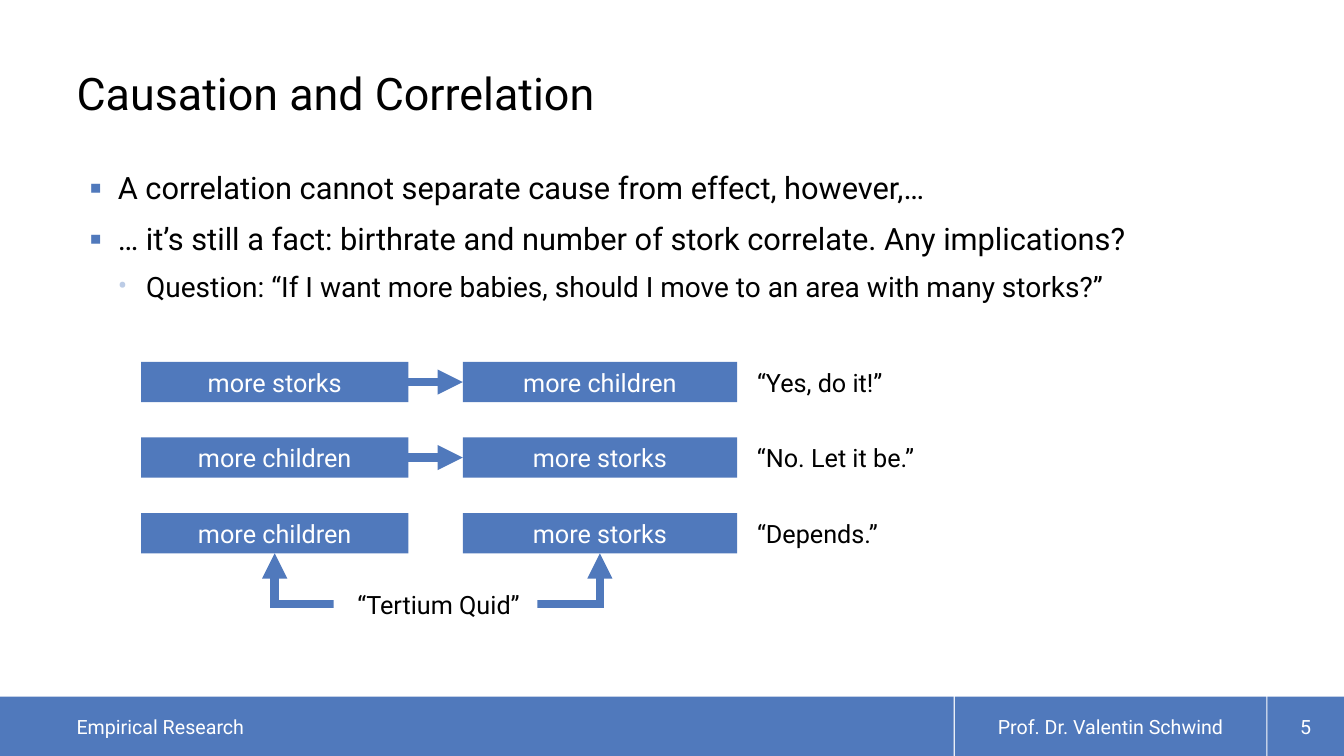
from dataclasses import dataclass

from lxml.etree import SubElement
from pptx import Presentation
from pptx.dml.color import RGBColor
from pptx.enum.shapes import MSO_CONNECTOR, MSO_SHAPE
from pptx.enum.text import MSO_ANCHOR, PP_ALIGN
from pptx.oxml.ns import qn
from pptx.slide import Slide
from pptx.text.text import TextFrame, _Paragraph
from pptx.util import Inches, Pt


@dataclass(frozen=True)
class Theme:
    """Colours and type sizes of the slide."""
    font: str = "Roboto"
    blue: RGBColor = RGBColor(0x50, 0x79, 0xBC)
    pale_blue: RGBColor = RGBColor(0xBC, 0xCC, 0xE6)
    white: RGBColor = RGBColor(0xFF, 0xFF, 0xFF)
    black: RGBColor = RGBColor(0, 0, 0)
    title: int = 32
    point: int = 22
    subpoint: int = 20
    diagram: int = 18
    footer: int = 14
    arrow: int = 6


@dataclass(frozen=True)
class Panel:
    """A filled rectangle with one line of text."""
    text: str
    left: float
    top: float
    width: float
    height: float
    fill: RGBColor
    ink: RGBColor
    size: int
    align: PP_ALIGN = PP_ALIGN.CENTER
    left_inset: float = 0.1
    right_inset: float = 0.1


@dataclass(frozen=True)
class Bullet:
    """A bulleted statement."""
    text: str
    level: int
    mark: str
    mark_color: RGBColor
    size: int


@dataclass(frozen=True)
class Hypothesis:
    """A pair of linked observations and the answer they imply."""
    first: str
    second: str
    answer: str
    answer_width: float
    causal: bool


THEME = Theme()
ROW_TOP, ROW_STEP, ROW_HEIGHT = 3.59, 0.75, 0.4
FIRST_LEFT, FIRST_WIDTH = 1.4, 2.65
SECOND_LEFT, SECOND_WIDTH = 4.59, 2.72
ANSWER_LEFT = 7.41
FOOTER_TOP, FOOTER_HEIGHT = 6.91, 0.59

BULLETS = [
    Bullet("A correlation cannot separate cause from effect, however,…",
           0, "▪", THEME.blue, THEME.point),
    Bullet("… it’s still a fact: birthrate and number of stork correlate. Any implications?",
           0, "▪", THEME.blue, THEME.point),
    Bullet("Question: “If I want more babies, should I move to an area with many storks?”",
           1, "•", THEME.pale_blue, THEME.subpoint),
]
HYPOTHESES = [
    Hypothesis("more storks", "more children", "“Yes, do it!”", 2.29, True),
    Hypothesis("more children", "more storks", "“No. Let it be.”", 2.14, True),
    Hypothesis("more children", "more storks", "“Depends.”", 1.49, False),
]
FOOTER = [
    Panel("Empirical Research", 0, FOOTER_TOP, 9.46, FOOTER_HEIGHT, THEME.blue,
          THEME.white, THEME.footer, PP_ALIGN.LEFT, 0.76, 0.2),
    Panel("Prof. Dr. Valentin Schwind", 9.47, FOOTER_TOP, 3.09, FOOTER_HEIGHT,
          THEME.blue, THEME.white, THEME.footer, left_inset=0, right_inset=0),
    Panel("5", 12.57, FOOTER_TOP, 0.76, FOOTER_HEIGHT, THEME.blue,
          THEME.white, THEME.footer, left_inset=0, right_inset=0),
]


def style(paragraph: _Paragraph, size: int, ink: RGBColor) -> None:
    """Set the font of a paragraph."""
    paragraph.font.name = THEME.font
    paragraph.font.size = Pt(size)
    paragraph.font.color.rgb = ink


def add_panel(slide: Slide, panel: Panel) -> None:
    """Draw a filled rectangle with its text."""
    box = slide.shapes.add_shape(
        MSO_SHAPE.RECTANGLE, Inches(panel.left), Inches(panel.top),
        Inches(panel.width), Inches(panel.height))
    box.shadow.inherit = False
    box.fill.solid()
    box.fill.fore_color.rgb = panel.fill
    box.line.fill.background()
    frame = box.text_frame
    frame.word_wrap = True
    frame.vertical_anchor = MSO_ANCHOR.MIDDLE
    frame.margin_left = Inches(panel.left_inset)
    frame.margin_right = Inches(panel.right_inset)
    statement = frame.paragraphs[0]
    statement.text = panel.text
    statement.alignment = panel.align
    style(statement, panel.size, panel.ink)


def add_text_area(slide: Slide, top: float, height: float) -> TextFrame:
    """Add a wrapping text box as wide as the content column."""
    frame = slide.shapes.add_textbox(
        Inches(0.76), Inches(top), Inches(11.81), Inches(height)).text_frame
    frame.word_wrap = True
    return frame


def add_title(slide: Slide, text: str) -> None:
    """Write the slide title."""
    frame = add_text_area(slide, 0.13, 1.06)
    frame.margin_left = frame.margin_right = frame.margin_top = frame.margin_bottom = 0
    frame.vertical_anchor = MSO_ANCHOR.BOTTOM
    heading = frame.paragraphs[0]
    heading.text = text
    heading.line_spacing = 0.9
    style(heading, THEME.title, THEME.black)


def add_bullets(slide: Slide, bullets: list[Bullet]) -> None:
    """Write the bulleted statements."""
    frame = add_text_area(slide, 1.59, 5.12)
    for index, bullet in enumerate(bullets):
        statement = frame.add_paragraph() if index else frame.paragraphs[0]
        statement.text = bullet.text
        statement.level = bullet.level
        statement.line_spacing = 1.1
        statement.space_before = Pt(3 if index else 0)
        statement.space_after = Pt(4)
        properties = statement._p.get_or_add_pPr()
        properties.set("marL", str(Inches(0.31 + 0.28 * bullet.level)))
        properties.set("indent", str(Inches(-0.28)))
        mark_color = SubElement(properties, qn("a:buClr"))
        SubElement(mark_color, qn("a:srgbClr"), val=str(bullet.mark_color))
        SubElement(properties, qn("a:buFont"), typeface=THEME.font)
        SubElement(properties, qn("a:buChar"), char=bullet.mark)
        style(statement, bullet.size, THEME.black)


def style_arrow(arrow, *ends: str) -> None:
    """Give a line the thick blue stroke and triangular heads."""
    arrow.line.color.rgb = THEME.blue
    arrow.line.width = Pt(THEME.arrow)
    stroke = arrow.line._get_or_add_ln()
    SubElement(stroke, qn("a:miter"), lim="800000")
    for end in ends:
        SubElement(stroke, qn(f"a:{end}"), type="triangle")


def add_cause_arrow(slide: Slide, middle: float) -> None:
    """Point from the first observation to the second."""
    arrow = slide.shapes.add_connector(
        MSO_CONNECTOR.STRAIGHT, Inches(FIRST_LEFT + FIRST_WIDTH), Inches(middle),
        Inches(SECOND_LEFT), Inches(middle))
    style_arrow(arrow, "tailEnd")
    SubElement(arrow._element.spPr, qn("a:effectLst"))


def add_common_cause(slide: Slide, top: float) -> None:
    """Link both observations to a shared third cause."""
    first_x = Inches(FIRST_LEFT + FIRST_WIDTH / 2)
    second_x = Inches(SECOND_LEFT + SECOND_WIDTH / 2)
    start, bend = Inches(top), Inches(top + 0.5)
    outline = slide.shapes.build_freeform(first_x, start)
    outline.add_line_segments(
        [(first_x, bend), (second_x, bend), (second_x, start)], close=False)
    arrow = outline.convert_to_shape()
    arrow.shadow.inherit = False
    arrow.fill.background()
    style_arrow(arrow, "headEnd", "tailEnd")
    add_panel(slide, Panel("“Tertium Quid”", 3.31, top + 0.31, 2.02, ROW_HEIGHT,
                           THEME.white, THEME.black, THEME.diagram, left_inset=0.16))


def add_hypothesis(slide: Slide, hypothesis: Hypothesis, top: float) -> None:
    """Draw one row of the diagram."""
    for text, left, width in ((hypothesis.first, FIRST_LEFT, FIRST_WIDTH),
                              (hypothesis.second, SECOND_LEFT, SECOND_WIDTH)):
        add_panel(slide, Panel(text, left, top, width, ROW_HEIGHT,
                               THEME.blue, THEME.white, THEME.diagram))
    add_panel(slide, Panel(hypothesis.answer, ANSWER_LEFT, top, hypothesis.answer_width,
                           ROW_HEIGHT, THEME.white, THEME.black, THEME.diagram,
                           PP_ALIGN.LEFT))
    if hypothesis.causal:
        add_cause_arrow(slide, top + ROW_HEIGHT / 2)
    else:
        add_common_cause(slide, top + ROW_HEIGHT)


def main() -> None:
    """Build and save the slide."""
    deck = Presentation()
    deck.slide_width, deck.slide_height = Inches(13.33), Inches(7.5)
    slide = deck.slides.add_slide(deck.slide_layouts[6])
    for panel in FOOTER:
        add_panel(slide, panel)
    add_title(slide, "Causation and Correlation")
    add_bullets(slide, BULLETS)
    for row, hypothesis in enumerate(HYPOTHESES):
        add_hypothesis(slide, hypothesis, ROW_TOP + row * ROW_STEP)
    deck.save("out.pptx")


if __name__ == "__main__":
    main()
